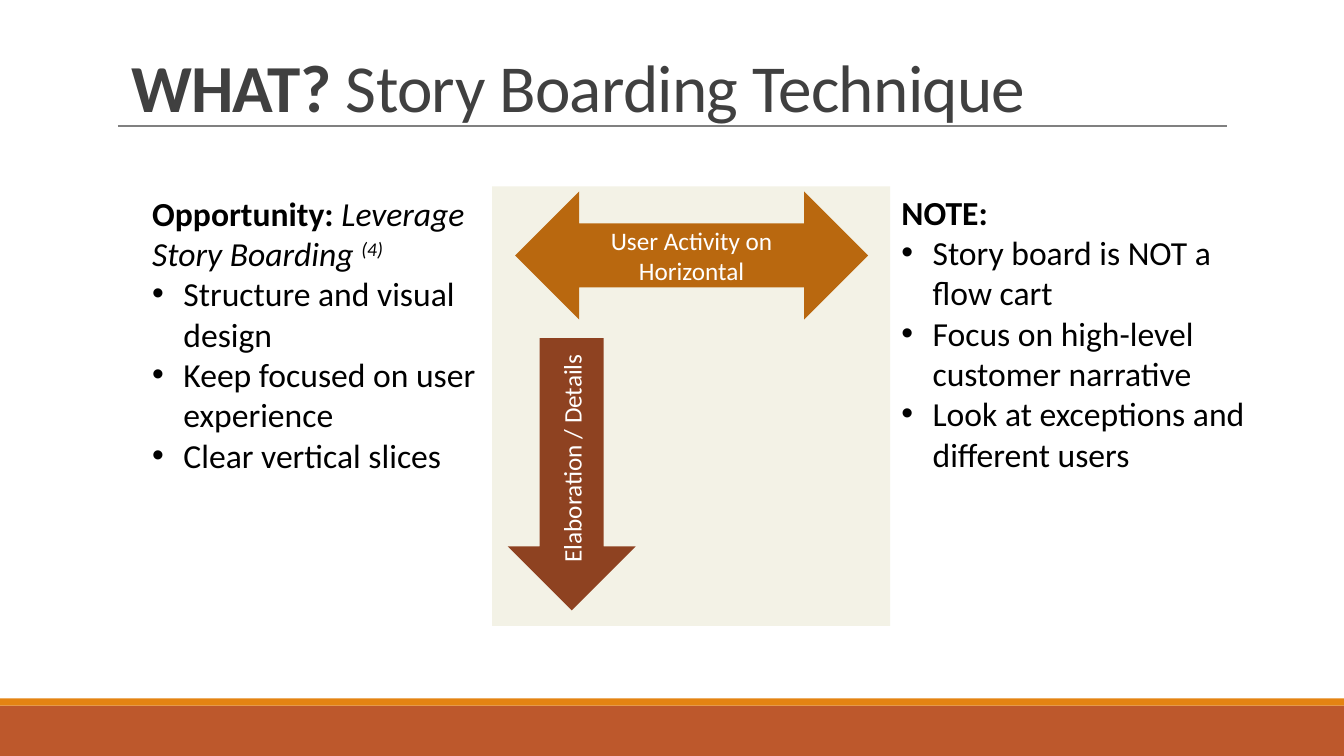
from lxml import etree
from pptx import Presentation
from pptx.dml.color import RGBColor
from pptx.enum.shapes import MSO_CONNECTOR, MSO_SHAPE
from pptx.enum.text import MSO_ANCHOR, MSO_AUTO_SIZE, PP_ALIGN
from pptx.oxml.ns import qn
from pptx.util import Inches, Pt

RECT = MSO_SHAPE.RECTANGLE
LEFT_RIGHT_ARROW = MSO_SHAPE.LEFT_RIGHT_ARROW
LEFT_ARROW = MSO_SHAPE.LEFT_ARROW
STRAIGHT = MSO_CONNECTOR.STRAIGHT
LEFT, CENTER = PP_ALIGN.LEFT, PP_ALIGN.CENTER
TOP, MIDDLE = MSO_ANCHOR.TOP, MSO_ANCHOR.MIDDLE
NO_FIT = MSO_AUTO_SIZE.NONE

WIDTH, HEIGHT = 13.33, 7.5
BULLET_INDENT = 0.31


def rgb(value):
    return RGBColor.from_string(value)


class SlideBuilder:
    font = "Calibri"
    title_format = {"size": Pt(48), "color": "404040"}
    body_format = {"size": Pt(24), "color": "000000"}
    label_format = {"size": Pt(18), "color": "FFFFFF"}

    def __init__(self, slide):
        self.s = slide

    def run(self, p, text, fmt, **extra):
        r = p.add_run()
        r.text = text
        for name, value in {"name": self.font, **fmt, **extra}.items():
            if name == "color":
                r.font.color.rgb = rgb(value)
            elif name in ("baseline", "spc"):
                r.font._element.set(name, str(value))
            else:
                setattr(r.font, name, value)

    def place(self, sp, at, anchor):
        for name, value in zip(("left", "top", "width", "height"), at):
            setattr(sp, name, Inches(value))
        tf = sp.text_frame
        for name, value in {"word_wrap": True, "auto_size": NO_FIT,
                            "vertical_anchor": anchor}.items():
            setattr(tf, name, value)
        return tf

    def title(self, at, runs):
        p = self.place(self.s.shapes.title, at, MIDDLE).paragraphs[0]
        p.alignment = LEFT
        p.line_spacing = 0.85
        for text, extra in runs:
            self.run(p, text, self.title_format, spc=-50, **extra)

    def body(self, index, at, heading, bullets):
        tf = self.place(self.s.placeholders[index], at, TOP)
        rows = [(heading, False)] + [([(b, {})], True) for b in bullets]
        for i, (runs, bulleted) in enumerate(rows):
            p = tf.add_paragraph() if i else tf.paragraphs[0]
            p.alignment = LEFT
            p.space_before = Pt(0)
            self.bullet(p, bulleted)
            for text, extra in runs:
                self.run(p, text, self.body_format, **extra)

    def bullet(self, p, bulleted):
        indent = Inches(BULLET_INDENT) if bulleted else 0
        pPr = p._p.get_or_add_pPr()
        pPr.set("marL", str(indent))
        pPr.set("indent", str(-indent))
        if bulleted:
            etree.SubElement(pPr, qn("a:buFont")).set("typeface", "Arial")
            etree.SubElement(pPr, qn("a:buChar")).set("char", "•")
        else:
            etree.SubElement(pPr, qn("a:buNone"))

    def shape(self, kind, at, fill, label=None, rotation=0):
        sp = self.s.shapes.add_shape(kind, *map(Inches, at))
        sp.shadow.inherit = False
        sp.rotation = rotation
        sp.fill.solid()
        sp.fill.fore_color.rgb = rgb(fill)
        sp.line.fill.background()
        if label:
            p = self.place(sp, at, MIDDLE).paragraphs[0]
            p.alignment = CENTER
            self.run(p, label, self.label_format)

    def line(self, start, end, color, width):
        cx = self.s.shapes.add_connector(STRAIGHT, *map(Inches, start + end))
        cx.line.color.rgb = rgb(color)
        cx.line.width = Pt(width)
        etree.SubElement(cx._element.spPr, qn("a:effectLst"))


def main():
    prs = Presentation()
    prs.slide_width, prs.slide_height = Inches(WIDTH), Inches(HEIGHT)
    two_content = prs.slide_layouts[3]
    b = SlideBuilder(prs.slides.add_slide(two_content))

    # Footer bands and title rule
    b.shape(RECT, (0, 7, WIDTH, 0.5), "BD582C")
    b.shape(RECT, (0, 6.93, WIDTH, 0.07), "E48312")
    b.line((1.17, 1.25), (12.17, 1.25), "808080", 1.5)

    # Title
    b.title((1.2, 0.47, 11, 0.88), [
        ("WHAT? ", {"bold": True}),
        ("Story Boarding Technique", {"bold": False}),
    ])

    # Lists on either side
    b.body(1, (1.41, 1.86, 3.47, 2.93), [
        ("Opportunity: ", {"bold": True}),
        ("Leverage Story Boarding ", {"italic": True}),
        ("(4)", {"italic": True, "baseline": 30000}),
    ], [
        "Structure and visual design",
        "Keep focused on user experience",
        "Clear vertical slices",
    ])
    b.body(2, (8.84, 1.85, 3.91, 2.93), [("NOTE:", {"bold": True})], [
        "Story board is NOT a flow cart",
        "Focus on high-level customer narrative",
        "Look at exceptions and different users",
    ])

    # Story board panel with its two axes
    b.shape(RECT, (4.88, 1.85, 3.95, 4.36), "F3F2E6")
    b.shape(LEFT_RIGHT_ARROW, (5.11, 1.9, 3.5, 1.27), "B9680F",
            "User Activity on Horizontal")
    b.shape(LEFT_ARROW, (4.32, 4.07, 2.7, 1.27), "8E4221",
            "Elaboration / Details", rotation=270)

    prs.save("out.pptx")


if __name__ == "__main__":
    main()
